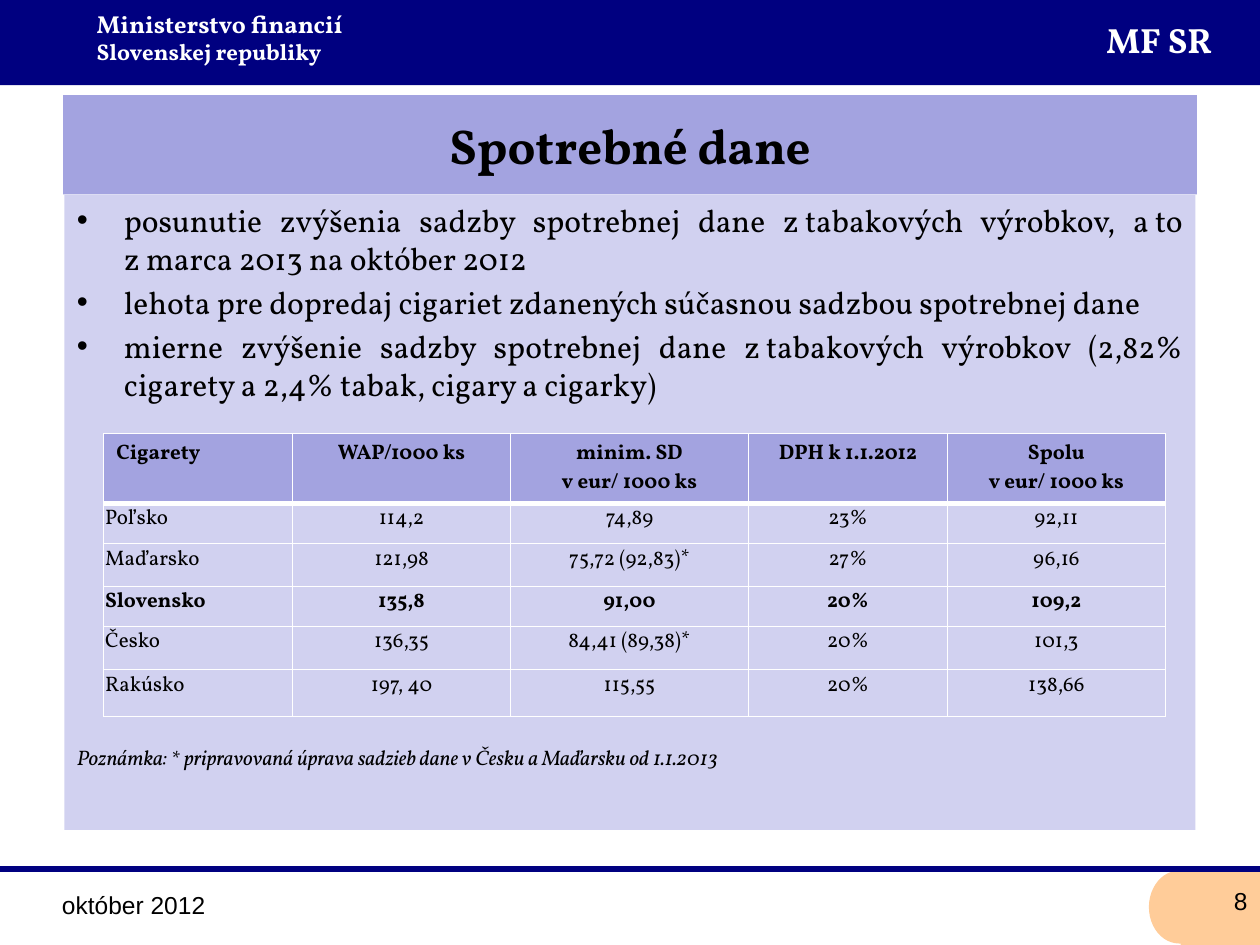
from lxml.etree import SubElement
from pptx import Presentation
from pptx.dml.color import RGBColor
from pptx.enum.shapes import MSO_CONNECTOR, MSO_SHAPE
from pptx.enum.text import MSO_ANCHOR as ANCHOR, PP_ALIGN as ALIGN
from pptx.oxml.ns import qn
from pptx.util import Cm, Pt

NAVY, PEACH, WHITE, BLACK = "000080", "FFCC99", "FFFFFF", "000000"
LILAC, PALE = "A3A3E0", "D1D1F0"
NBSP = chr(160)


def paint(color_format, value):
    if hasattr(color_format, "solid"):
        color_format.solid()
        color_format = color_format.fore_color
    color_format.rgb = RGBColor.from_string(value)


def add_run(p, text, size, color=BLACK, bold=False, italic=False, font="Vollkorn"):
    r = p.add_run()
    r.text = text.replace("~", NBSP)
    r.font.name, r.font.size = font, Pt(size)
    r.font.bold, r.font.italic = bold, italic
    paint(r.font.color, color)


prs = Presentation()
prs.slide_width, prs.slide_height = Cm(25.4), Cm(19.05)
s = prs.slides.add_slide(prs.slide_layouts[5])

panels = []
for kind, box, color in [
    (MSO_SHAPE.RECTANGLE, (23.8, 17.58, 1.6, 1.47), PEACH),
    (MSO_SHAPE.FLOWCHART_DELAY, (23.16, 17.55, 1.22, 1.47), PEACH),
    (MSO_SHAPE.RECTANGLE, (0, 0, 25.4, 1.72), NAVY),
    (MSO_SHAPE.RECTANGLE, (1.3, 3.93, 22.8, 12.8), PALE),
]:
    sp = s.shapes.add_shape(kind, *map(Cm, box))
    sp.shadow.inherit = False
    sp.line.fill.background()
    paint(sp.fill, color)
    panels.append(sp)
page_corner, page_cap, header, body = panels
page_cap.rotation = 180

rule = s.shapes.add_connector(MSO_CONNECTOR.STRAIGHT, 0, Cm(17.52), Cm(25.4), Cm(17.52))
rule.line.width = Pt(3)
paint(rule.line.color, NAVY)
SubElement(rule._element.spPr, qn("a:effectLst"))

title = s.shapes.title
title.left, title.top, title.width, title.height = map(Cm, (1.27, 1.92, 22.86, 2))
paint(title.fill, LILAC)
tf = title.text_frame
tf.vertical_anchor = ANCHOR.MIDDLE
tf.paragraphs[0].alignment = ALIGN.CENTER
add_run(tf.paragraphs[0], "Spotrebné dane", 28, bold=True)

tf = body.text_frame
tf.word_wrap = True
tf.vertical_anchor = ANCHOR.TOP
for i, text in enumerate([
    "posunutie zvýšenia sadzby spotrebnej dane z~tabakových výrobkov, a~to z~marca 2013 na október 2012",
    "lehota pre dopredaj cigariet zdanených súčasnou sadzbou spotrebnej dane",
    "mierne zvýšenie sadzby spotrebnej dane z~tabakových výrobkov (2,82% cigarety a 2,4% tabak, cigary a cigarky)",
]):
    p = tf.add_paragraph() if i else tf.paragraphs[0]
    p.alignment = ALIGN.JUSTIFY
    p.space_before = Pt(3.6)
    pPr = p._p.get_or_add_pPr()
    pPr.set("marL", str(Cm(0.95)))
    pPr.set("indent", str(-Cm(0.95)))
    SubElement(pPr, qn("a:buFont"), typeface="Arial")
    SubElement(pPr, qn("a:buChar"), char="•")
    add_run(p, text, 18)

bold_white = dict(color=WHITE, bold=True)
for box, align, lines in [
    ((1.7, 0.05, 7.24, 1.42), ALIGN.LEFT,
     [("Ministerstvo financií", 14, bold_white), ("Slovenskej republiky", 13, bold_white)]),
    ((21.42, 0.25, 3.9, 1.4), ALIGN.CENTER, [("MF SR", 20, bold_white)]),
    ((1.3, 14.88, 22.8, 0.8), ALIGN.LEFT,
     [("Poznámka: * pripravovaná úprava sadzieb dane v Česku a Maďarsku od 1.1.2013",
       12, dict(italic=True))]),
    ((1, 17.81, 5.9, 0.99), ALIGN.LEFT, [("október 2012", 14, dict(font="Arial"))]),
    ((19.48, 17.73, 5.92, 0.94), ALIGN.RIGHT, [("8", 14, dict(font="Arial"))]),
]:
    tf = s.shapes.add_textbox(*map(Cm, box)).text_frame
    tf.word_wrap = True
    for i, (text, size, style) in enumerate(lines):
        p = tf.add_paragraph() if i else tf.paragraphs[0]
        p.alignment = align
        add_run(p, text, size, **style)

rows = [
    ("Cigarety", "WAP/1000 ks", "minim. SD\nv~eur/ 1000 ks", "DPH k~1.1.2012", "Spolu\nv~eur/ 1000 ks"),
    ("Poľsko", "114,2", "74,89", "23%", "92,11"),
    ("Maďarsko", "121,98", "75,72 (92,83)*", "27%", "96,16"),
    ("Slovensko", "135,8", "91,00", "20%", "109,2"),
    ("Česko", "136,35", "84,41 (89,38)*", "20%", "101,3"),
    ("Rakúsko", "197, 40", "115,55", "20%", "138,66"),
]
widths = [3.81, 4.39, 4.8, 4.01, 4.39]
heights = [1.41, 0.81, 0.86, 0.81, 0.87, 0.94]
table = s.shapes.add_table(len(rows), len(widths), Cm(2.09), Cm(8.74),
                           Cm(sum(widths)), Cm(sum(heights))).table
for column, width in zip(table.columns, widths):
    column.width = Cm(width)
for row, height in zip(table.rows, heights):
    row.height = Cm(height)

for i, row in enumerate(rows):
    for j, text in enumerate(row):
        cell = table.cell(i, j)
        tcPr = cell._tc.get_or_add_tcPr()
        for side in ("lnL", "lnR", "lnT", "lnB"):
            thick = (i, side) in [(0, "lnB"), (1, "lnT")]
            ln = SubElement(tcPr, qn(f"a:{side}"), w=str(Pt(3 if thick else 1)))
            SubElement(SubElement(ln, qn("a:solidFill")), qn("a:srgbClr"), val=WHITE)
        paint(cell.fill, PALE if i else LILAC)
        if i:
            cell.margin_left = cell.margin_right = cell.margin_top = Cm(0.03)
            cell.margin_bottom = 0
        for k, line in enumerate(text.split("\n")):
            p = cell.text_frame.add_paragraph() if k else cell.text_frame.paragraphs[0]
            p.alignment = ALIGN.CENTER if j else ALIGN.LEFT
            add_run(p, line, 12, bold=i == 0 or row[0] == "Slovensko")

prs.save("out.pptx")
